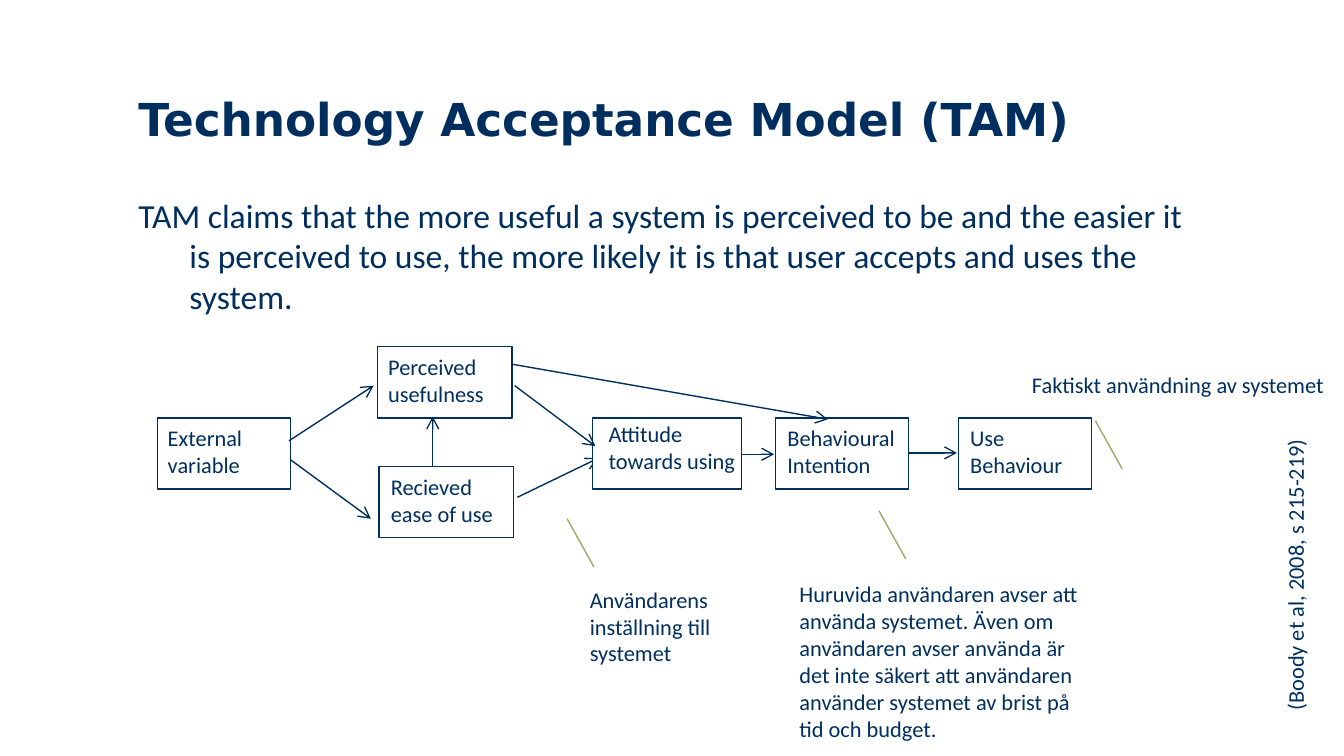
from typing import NamedTuple

from pptx import Presentation
from pptx.dml.color import RGBColor
from pptx.enum.shapes import MSO_CONNECTOR, MSO_SHAPE
from pptx.enum.text import MSO_ANCHOR, MSO_AUTO_SIZE, PP_ALIGN
from pptx.oxml.ns import qn
from pptx.util import Emu, Pt
from lxml.etree import SubElement

PX = 9144  # EMU per px, 100 px to the inch
NAVY, ARROW_NAVY, OLIVE, WHITE = "002F5F", "002E5D", "A1A667", "FFFFFF"
BOX_HEIGHT = 53


class Label(NamedTuple):
    text: str
    left: int
    top: int
    width: int
    height: int = 50
    rotation: int = 0


class Box(NamedTuple):
    left: int
    top: int
    width: int
    label: Label


class Line(NamedTuple):
    x1: int
    y1: int
    x2: int
    y2: int


def px(length: int) -> Emu:
    return Emu(length * PX)


def colour(code: str) -> RGBColor:
    return RGBColor.from_string(code)


def place(shape, left: int, top: int, width: int, height: int) -> None:
    shape.left, shape.top = px(left), px(top)
    shape.width, shape.height = px(width), px(height)


def set_font(para, name: str, size: float, bold: bool = False) -> None:
    font = para.font
    font.name, font.size, font.bold = name, Pt(size), bold
    font.color.rgb = colour(NAVY)


def draw_label(slide, label: Label) -> None:
    shape = slide.shapes.add_textbox(*map(px, label[1:5]))
    shape.rotation = label.rotation
    frame = shape.text_frame
    frame.word_wrap = True
    frame.auto_size = MSO_AUTO_SIZE.SHAPE_TO_FIT_TEXT
    frame.text = label.text
    set_font(frame.paragraphs[0], "Calibri", 12)


def draw_box(slide, box: Box) -> None:
    shape = slide.shapes.add_shape(
        MSO_SHAPE.RECTANGLE, px(box.left), px(box.top), px(box.width), px(BOX_HEIGHT))
    shape.shadow.inherit = False
    shape.fill.solid()
    shape.fill.fore_color.rgb = colour(WHITE)
    shape.line.color.rgb = colour(NAVY)
    shape.line.width = Pt(0.75)
    draw_label(slide, box.label)


def draw_line(slide, line: Line, code: str, arrow: bool) -> None:
    connector = slide.shapes.add_connector(MSO_CONNECTOR.STRAIGHT, *map(px, line))
    connector.line.color.rgb = colour(code)
    connector.line.width = Pt(0.75)
    if arrow:
        SubElement(connector.line._get_or_add_ln(), qn("a:tailEnd"), type="arrow")
    SubElement(connector._element.spPr, qn("a:effectLst"))


# The model from back to front; the attitude box covers the arrows before it
MODEL = [
    Box(281, 258, 100, Label("Perceived usefulness", 279, 258, 120)),
    Box(282, 347, 100, Label("Recieved ease of use", 281, 347, 100)),
    Box(577, 311, 99, Label("Behavioural Intention", 576, 311, 159)),
    Box(713, 311, 99, Label("Use Behaviour", 712, 311, 94)),
    Line(385, 370, 445, 341),  # ease of use to attitude
    Line(541, 338, 576, 338),  # attitude to intention
    Line(676, 337, 712, 337),  # intention to use
    Box(441, 311, 111, Label("Attitude towards using", 443, 308, 122)),
    Line(383, 287, 443, 332),  # usefulness to attitude
    Line(322, 347, 322, 310),  # ease of use to usefulness
    Line(381, 271, 616, 312),  # usefulness to intention
    Box(117, 311, 99, Label("External variable", 115, 311, 94)),
    Line(215, 328, 278, 287),  # external variable to usefulness
    Line(216, 342, 276, 386),  # external variable to ease of use
]
NOTES = [
    Label("(Boody et al, 2008, s 215-219)", 838, 398, 251, 30, 270),
    Label("Huruvida användaren avser att använda systemet. Även om användaren "
          "avser använda är det inte säkert att användaren använder systemet "
          "av brist på tid och budget.", 585, 427, 242, 131),
    Label("Faktiskt användning av systemet", 758, 271, 242, 30),
    Label("Användarens inställning till systemet", 429, 431, 149, 71),
]
NOTE_STARTS = [(654, 380), (815, 313), (422, 386)]


def main() -> None:
    deck = Presentation()
    deck.slide_width = px(1000)
    deck.slide_height = Emu(deck.slide_width * 9 // 16)
    slide = deck.slides.add_slide(deck.slide_layouts[1])

    # Title
    title = slide.shapes.title
    place(title, 93, 63, 750, 94)
    title.text_frame.text = "Technology Acceptance Model (TAM)"
    title.text_frame.vertical_anchor = MSO_ANCHOR.TOP
    para = title.text_frame.paragraphs[0]
    para.alignment = PP_ALIGN.LEFT
    set_font(para, "DejaVu Sans", 24.3, bold=True)

    # Claim with a hanging indent
    body = slide.placeholders[1]
    place(body, 96, 141, 809, 216)
    frame = body.text_frame
    frame.margin_left = frame.margin_right = px(7)
    frame.margin_top = frame.margin_bottom = px(4)
    frame.text = ("TAM claims that the more useful a system is perceived to be and "
                  "the easier it is perceived to use, the more likely it is that "
                  "user accepts and uses the system.")
    para = frame.paragraphs[0]
    properties = para._p.get_or_add_pPr()
    properties.set("marL", str(px(38)))
    properties.set("indent", str(px(-38)))
    SubElement(properties, qn("a:buNone"))
    para.space_before, para.space_after = Pt(0), Pt(9)
    set_font(para, "Calibri", 18)

    # Boxes and arrows
    for part in MODEL:
        if isinstance(part, Box):
            draw_box(slide, part)
        else:
            draw_line(slide, part, ARROW_NAVY, arrow=True)

    # Notes and their pointers
    for note in NOTES:
        draw_label(slide, note)
    for x, y in NOTE_STARTS:
        draw_line(slide, Line(x, y, x + 20, y + 36), OLIVE, arrow=False)

    deck.save("out.pptx")


if __name__ == "__main__":
    main()
